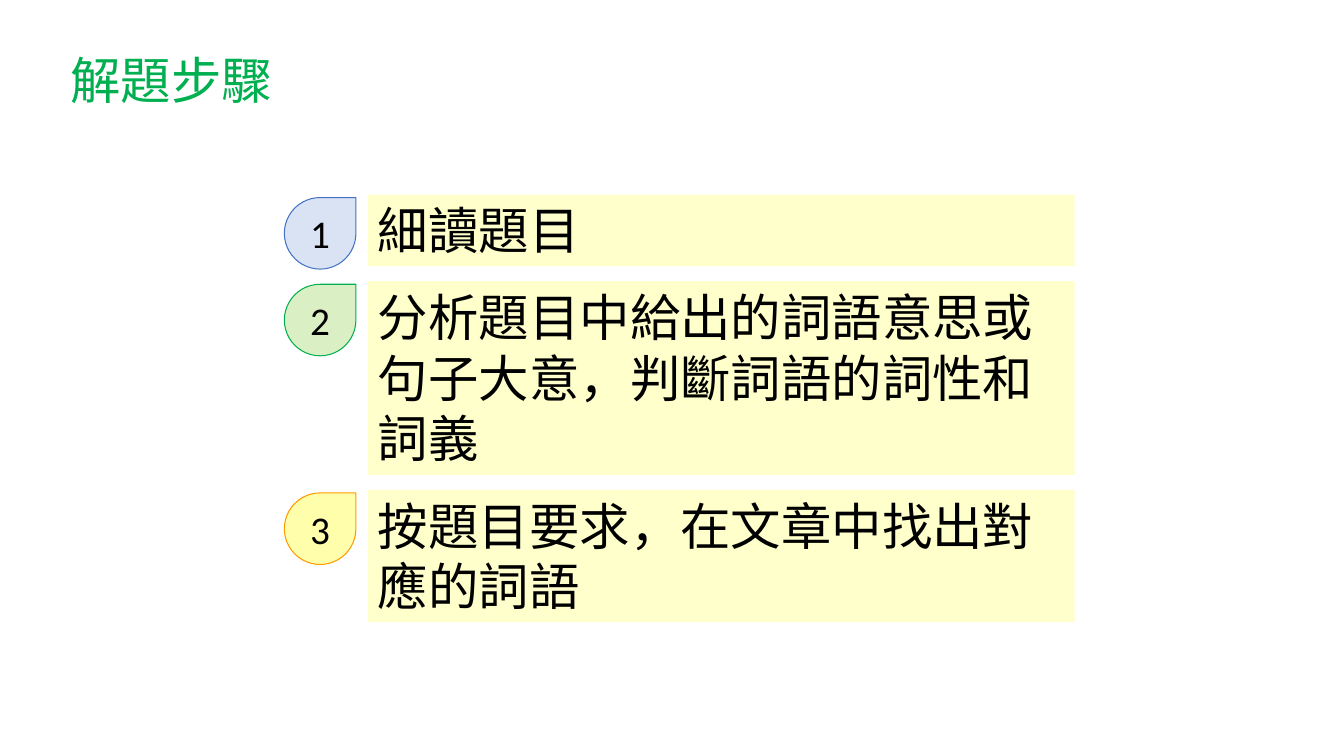
from lxml.etree import SubElement
from pptx import Presentation
from pptx.dml.color import RGBColor
from pptx.enum.shapes import MSO_SHAPE
from pptx.enum.text import MSO_ANCHOR, MSO_AUTO_SIZE, PP_ALIGN
from pptx.oxml.ns import qn
from pptx.util import Inches, Pt

STEPS = [
    ("細讀題目", 0.71, "8FAADC", "4472C4"),
    ("分析題目中給出的詞語意思或句子大意，判斷詞語的詞性和詞義", 1.92, "92D050", "00B050"),
    ("按題目要求，在文章中找出對應的詞語", 1.31, "FFFF00", "FF9900"),
]
FIRST_TOP = 1.93
STEP_GAP = 0.15
BADGE_DROP = 0.03


def color(value):
    return RGBColor.from_string(value)


class StepSlide:
    """Draws the title, step panels and numbered badges on one slide."""

    east_asian = "Noto Sans CJK SC"
    title_format = {"name": "Noto Sans CJK SC", "size": Pt(36)}
    panel_format = {"name": "Arial", "size": Pt(36)}
    badge_format = {"name": "Calibri", "size": Pt(28)}
    panel_fill = "FFFFCC"
    badge_alpha = "33000"

    def __init__(self, slide):
        self.shapes = slide.shapes

    def label(self, frame, text, font_format, ink="000000", align=PP_ALIGN.LEFT,
              **frame_format):
        for name, value in frame_format.items():
            setattr(frame, name, value)
        paragraph = frame.paragraphs[0]
        paragraph.alignment = align
        run = paragraph.add_run()
        run.text = text
        for name, value in font_format.items():
            setattr(run.font, name, value)
        run.font.color.rgb = color(ink)
        SubElement(run.font._element, qn("a:ea"), typeface=self.east_asian)

    def filled(self, preset, box, fill):
        shape = self.shapes.add_shape(preset, *map(Inches, box))
        shape.shadow.inherit = False
        shape.fill.solid()
        shape.fill.fore_color.rgb = color(fill)
        return shape

    def title(self, text, box, ink):
        heading = self.shapes.add_textbox(*map(Inches, box))
        self.label(heading.text_frame, text, self.title_format, ink,
                   word_wrap=False, auto_size=MSO_AUTO_SIZE.SHAPE_TO_FIT_TEXT)

    def panel(self, text, top, height):
        panel = self.filled(MSO_SHAPE.RECTANGLE, (3.65, top, 7.01, height), self.panel_fill)
        panel.line.fill.background()
        self.label(panel.text_frame, text, self.panel_format, word_wrap=True,
                   auto_size=MSO_AUTO_SIZE.SHAPE_TO_FIT_TEXT,
                   vertical_anchor=MSO_ANCHOR.TOP)

    def badge(self, number, top, fill, outline):
        badge = self.filled(MSO_SHAPE.TEAR, (2.82, top, 0.71, 0.71), fill)
        tint = badge._element.spPr.find(qn("a:solidFill")).find(qn("a:srgbClr"))
        SubElement(tint, qn("a:alpha"), val=self.badge_alpha)
        badge.line.color.rgb = color(outline)
        badge.line.width = Pt(0.75)
        self.label(badge.text_frame, str(number), self.badge_format,
                   align=PP_ALIGN.CENTER, word_wrap=True,
                   vertical_anchor=MSO_ANCHOR.MIDDLE)


def main():
    presentation = Presentation()
    presentation.slide_width = Inches(13.33)
    presentation.slide_height = Inches(7.5)
    page = StepSlide(presentation.slides.add_slide(presentation.slide_layouts[6]))

    top = FIRST_TOP
    for number, (instruction, height, fill, outline) in enumerate(STEPS, 1):
        page.panel(instruction, top, height)
        page.badge(number, top + BADGE_DROP, fill, outline)
        top += height + STEP_GAP
    page.title("解題步驟", (0.6, 0.44, 2.22, 0.71), "00B050")

    presentation.save("out.pptx")


if __name__ == "__main__":
    main()
